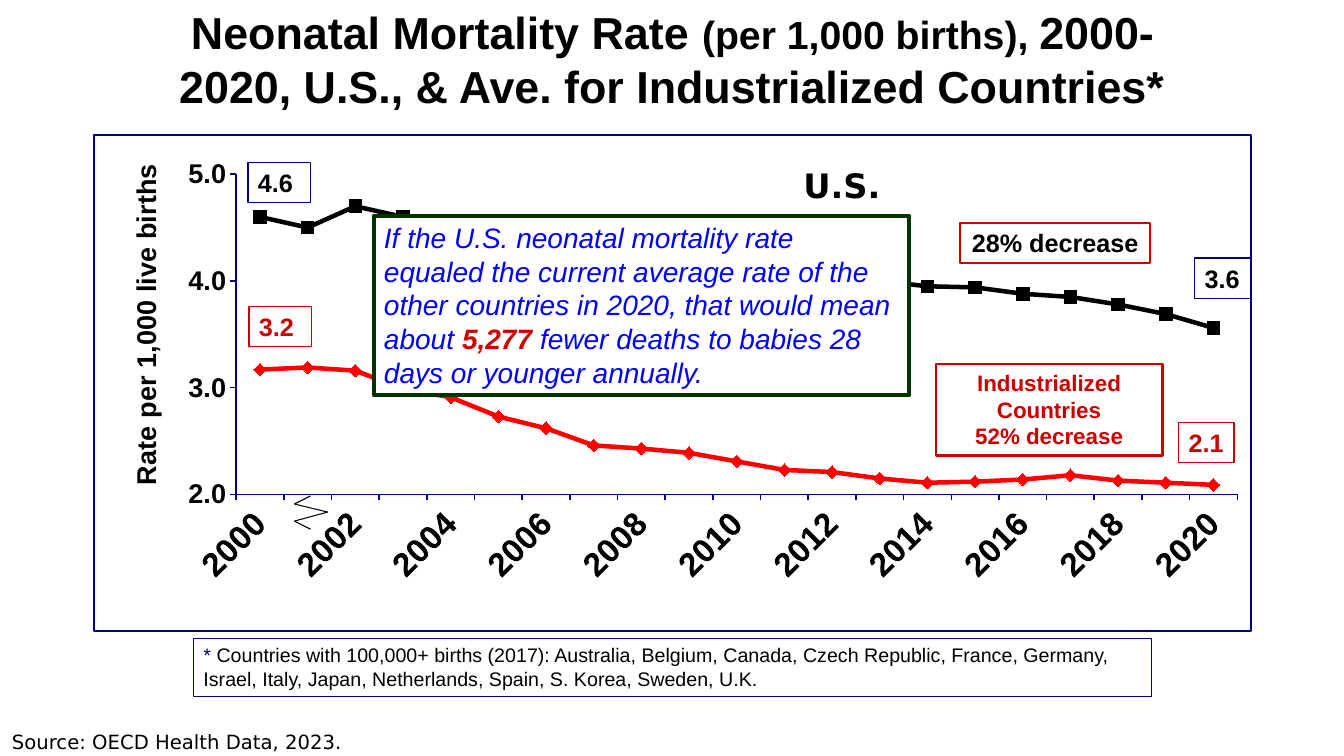
from dataclasses import dataclass
from itertools import pairwise

from lxml.etree import SubElement
from pptx import Presentation
from pptx.chart.chart import Chart
from pptx.chart.data import CategoryChartData
from pptx.dml.color import RGBColor
from pptx.enum.chart import XL_CHART_TYPE, XL_MARKER_STYLE, XL_TICK_MARK
from pptx.enum.shapes import MSO_CONNECTOR, MSO_SHAPE
from pptx.enum.text import MSO_ANCHOR, PP_ALIGN
from pptx.oxml import parse_xml
from pptx.oxml.ns import nsdecls, qn
from pptx.slide import Slide
from pptx.util import Inches, Pt

WHITE = RGBColor(0xFF, 0xFF, 0xFF)
BLACK = RGBColor(0x00, 0x00, 0x00)
NAVY = RGBColor(0x00, 0x00, 0x80)
DARK_BLUE = RGBColor(0x00, 0x00, 0x66)
BLUE = RGBColor(0x00, 0x00, 0xFF)
RED = RGBColor(0xFF, 0x00, 0x00)
CRIMSON = RGBColor(0xCC, 0x00, 0x00)
DARK_GREEN = RGBColor(0x00, 0x33, 0x00)


@dataclass
class Run:
    text: str
    size: float
    color: RGBColor = BLACK
    bold: bool = False
    italic: bool = False
    font: str = "Arial"


@dataclass
class Box:
    left: float
    top: float
    width: float
    height: float
    paragraphs: list[list[Run]]
    fill: RGBColor | None = WHITE
    line: RGBColor | None = None
    line_width: float = 1
    align: PP_ALIGN = PP_ALIGN.LEFT
    anchor: MSO_ANCHOR = MSO_ANCHOR.TOP
    wrap: bool = True


@dataclass
class Trend:
    name: str
    values: list[float]
    color: RGBColor
    marker: XL_MARKER_STYLE


TRENDS = [
    Trend("Series 1",
          [3.17, 3.19, 3.16, 2.99, 2.91, 2.73, 2.62, 2.46, 2.43, 2.39, 2.31,
           2.23, 2.21, 2.15, 2.11, 2.12, 2.14, 2.18, 2.13, 2.11, 2.09],
          RED, XL_MARKER_STYLE.DIAMOND),
    Trend("Series 2",
          [4.6, 4.5, 4.7, 4.6, 4.5, 4.5, 4.5, 4.4, 4.3, 4.2, 4.1,
           4.1, 4.1, 4, 3.95, 3.94, 3.88, 3.85, 3.78, 3.69, 3.56],
          BLACK, XL_MARKER_STYLE.SQUARE),
]

TITLE = Box(1.67, 0, 10, 1.17, [[
    Run("Neonatal Mortality Rate ", 32, bold=True),
    Run("(per 1,000 births), ", 28, bold=True),
    Run("2000-2020, U.S., & Ave. for Industrialized Countries*", 32, bold=True),
]], align=PP_ALIGN.CENTER, anchor=MSO_ANCHOR.MIDDLE)

LABELS = [
    Box(0.02, 7.19, 3.83, 0.34,
        [[Run("Source: OECD Health Data, 2023.", 14, font="DejaVu Sans")]]),
    Box(7.87, 1.59, 0.95, 0.5,
        [[Run("U.S.", 24, bold=True, font="DejaVu Sans")]], fill=None, wrap=False),
    Box(1.92, 6.33, 9.5, 0.58, [[
        Run("* ", 14, DARK_BLUE),
        Run("Countries with 100,000+ births (2017): Australia, Belgium, Canada, "
            "Czech Republic, France, Germany, Israel, Italy, Japan, Netherlands, "
            "Spain, S. Korea, Sweden, U.K.", 14),
    ]], line=NAVY, line_width=0.75),
    Box(11.69, 4.19, 0.55, 0.4, [[Run("2.1", 18, CRIMSON, bold=True)]],
        line=CRIMSON, wrap=False),
    Box(11.85, 2.56, 0.55, 0.4, [[Run("3.6", 18, bold=True)]],
        fill=None, line=NAVY, wrap=False),
    Box(2.46, 1.61, 0.62, 0.4, [[Run("4.6", 18, bold=True)]], fill=None, line=NAVY),
    Box(2.47, 3.04, 0.62, 0.4, [[Run("3.2", 18, CRIMSON, bold=True)]], line=CRIMSON),
    Box(9.28, 3.61, 2.25, 0.91, [
        [Run("Industrialized Countries", 16, CRIMSON, bold=True)],
        [Run("52% decrease", 16, CRIMSON, bold=True)],
    ], line=CRIMSON, line_width=1.5, align=PP_ALIGN.CENTER),
    Box(9.52, 2.21, 1.89, 0.4, [[Run("28% decrease", 18, bold=True)]],
        line=CRIMSON, line_width=1.5, align=PP_ALIGN.CENTER),
    Box(3.71, 2.14, 5.31, 1.78, [[
        Run("If the U.S. neonatal mortality rate equaled the current average rate of "
            "the other countries in 2020, that would mean about ", 20, BLUE, italic=True),
        Run("5,277 ", 20, CRIMSON, bold=True, italic=True),
        Run("fewer deaths to babies 28 days or younger annually.", 20, BLUE, italic=True),
    ]], line=DARK_GREEN, line_width=3),
]

AXIS_BREAK = [(3.08, 5.25), (2.92, 5.17), (3.25, 5.08), (2.92, 5), (3.08, 4.92)]


def style_font(font, size: float, color: RGBColor, bold: bool = True,
               italic: bool = False, name: str = "Arial") -> None:
    font.name, font.size = name, Pt(size)
    font.bold, font.italic = bold, italic
    font.color.rgb = color


def add_box(slide: Slide, box: Box) -> None:
    shape = slide.shapes.add_shape(MSO_SHAPE.RECTANGLE, Inches(box.left), Inches(box.top),
                                   Inches(box.width), Inches(box.height))
    shape.shadow.inherit = False
    if box.fill is None:
        shape.fill.background()
    else:
        shape.fill.solid()
        shape.fill.fore_color.rgb = box.fill
    if box.line is None:
        shape.line.fill.background()
    else:
        shape.line.color.rgb = box.line
        shape.line.width = Pt(box.line_width)
    frame = shape.text_frame
    frame.word_wrap = box.wrap
    frame.vertical_anchor = box.anchor
    for index, runs in enumerate(box.paragraphs):
        paragraph = frame.add_paragraph() if index else frame.paragraphs[0]
        paragraph.alignment = box.align
        for item in runs:
            run = paragraph.add_run()
            run.text = item.text
            style_font(run.font, item.size, item.color, item.bold, item.italic, item.font)


def add_axis_break(slide: Slide) -> None:
    for start, end in pairwise(AXIS_BREAK):
        connector = slide.shapes.add_connector(
            MSO_CONNECTOR.STRAIGHT, *map(Inches, start), *map(Inches, end))
        connector.line.color.rgb = BLACK
        connector.line.width = Pt(0.75)
        SubElement(connector.element.spPr, qn("a:effectLst"))


def set_layout(parent, position: int, **settings: str | float) -> None:
    for old in parent.findall(qn("c:layout")):
        parent.remove(old)
    entries = "".join(f'<c:{key} val="{value}"/>' for key, value in settings.items())
    parent.insert(position, parse_xml(
        f'<c:layout {nsdecls("c")}><c:manualLayout>{entries}</c:manualLayout></c:layout>'))


def style_chart_area(chart: Chart) -> None:
    chart_space = chart._chartSpace
    chart_space.find(qn("c:chart")).addnext(parse_xml(
        f'<c:spPr {nsdecls("c", "a")}><a:solidFill><a:srgbClr val="{WHITE}"/></a:solidFill>'
        f'<a:ln w="{Pt(1.5)}"><a:solidFill><a:srgbClr val="{NAVY}"/></a:solidFill></a:ln>'
        '</c:spPr>'))
    set_layout(chart_space.find(".//" + qn("c:plotArea")), 0, layoutTarget="inner",
               xMode="edge", yMode="edge", x=0.123, y=0.079, w=0.865, h=0.646)


def style_axes(chart: Chart) -> None:
    years, rates = chart.category_axis, chart.value_axis
    for axis, size in ((years, 23.7), (rates, 19.4)):
        axis.major_tick_mark = XL_TICK_MARK.OUTSIDE
        axis.minor_tick_mark = XL_TICK_MARK.NONE
        axis.format.line.color.rgb = NAVY
        axis.format.line.width = Pt(1.08)
        style_font(axis.tick_labels.font, size, BLACK)
    years_xml = years._element
    years_xml.find(qn("c:txPr")).find(qn("a:bodyPr")).set("rot", "-2700000")
    last = years_xml.find(qn("c:noMultiLvlLbl"))
    for tag, step in (("tickLblSkip", 2), ("tickMarkSkip", 1)):
        last.addprevious(parse_xml(f'<c:{tag} {nsdecls("c")} val="{step}"/>'))

    rates.minimum_scale, rates.maximum_scale, rates.major_unit = 2, 5, 1
    rates.tick_labels.number_format = "0.0"
    rates.tick_labels.number_format_is_linked = False
    rates.major_gridlines.format.line.color.rgb = WHITE
    rates.major_gridlines.format.line.width = Pt(0.27)
    frame = rates.axis_title.text_frame
    run = frame.paragraphs[0].add_run()
    run.text = "Rate per 1,000 live births"
    style_font(run.font, 19.4, BLACK)
    frame._txBody.find(qn("a:bodyPr")).set("rot", "-5400000")
    set_layout(rates.axis_title._element, 1, xMode="edge", yMode="edge", x=0.025, y=0.05)


def add_rate_chart(slide: Slide) -> None:
    data = CategoryChartData(number_format="0.00")
    data.categories = [str(year) for year in range(2000, 2021)]
    for trend in TRENDS:
        data.add_series(trend.name, trend.values)
    chart = slide.shapes.add_chart(XL_CHART_TYPE.LINE_MARKERS, Inches(0.92), Inches(1.33),
                                   Inches(11.5), Inches(4.94), data).chart
    chart.has_legend = chart.has_title = False
    style_font(chart.font, 19.4, BLACK)
    chart.plots[0].vary_by_categories = False
    for series, trend in zip(chart.plots[0].series, TRENDS):
        series.smooth = False
        series.format.line.color.rgb = trend.color
        series.format.line.width = Pt(3.23)
        series.marker.style, series.marker.size = trend.marker, 9
        series.marker.format.fill.solid()
        series.marker.format.fill.fore_color.rgb = trend.color
        series.marker.format.line.color.rgb = trend.color
    style_axes(chart)
    style_chart_area(chart)


def main() -> None:
    presentation = Presentation()
    presentation.slide_width, presentation.slide_height = Inches(13.33), Inches(7.5)
    slide = presentation.slides.add_slide(presentation.slide_layouts[6])
    add_box(slide, TITLE)
    add_rate_chart(slide)
    add_axis_break(slide)
    for label in LABELS:
        add_box(slide, label)
    presentation.save("out.pptx")


if __name__ == "__main__":
    main()
